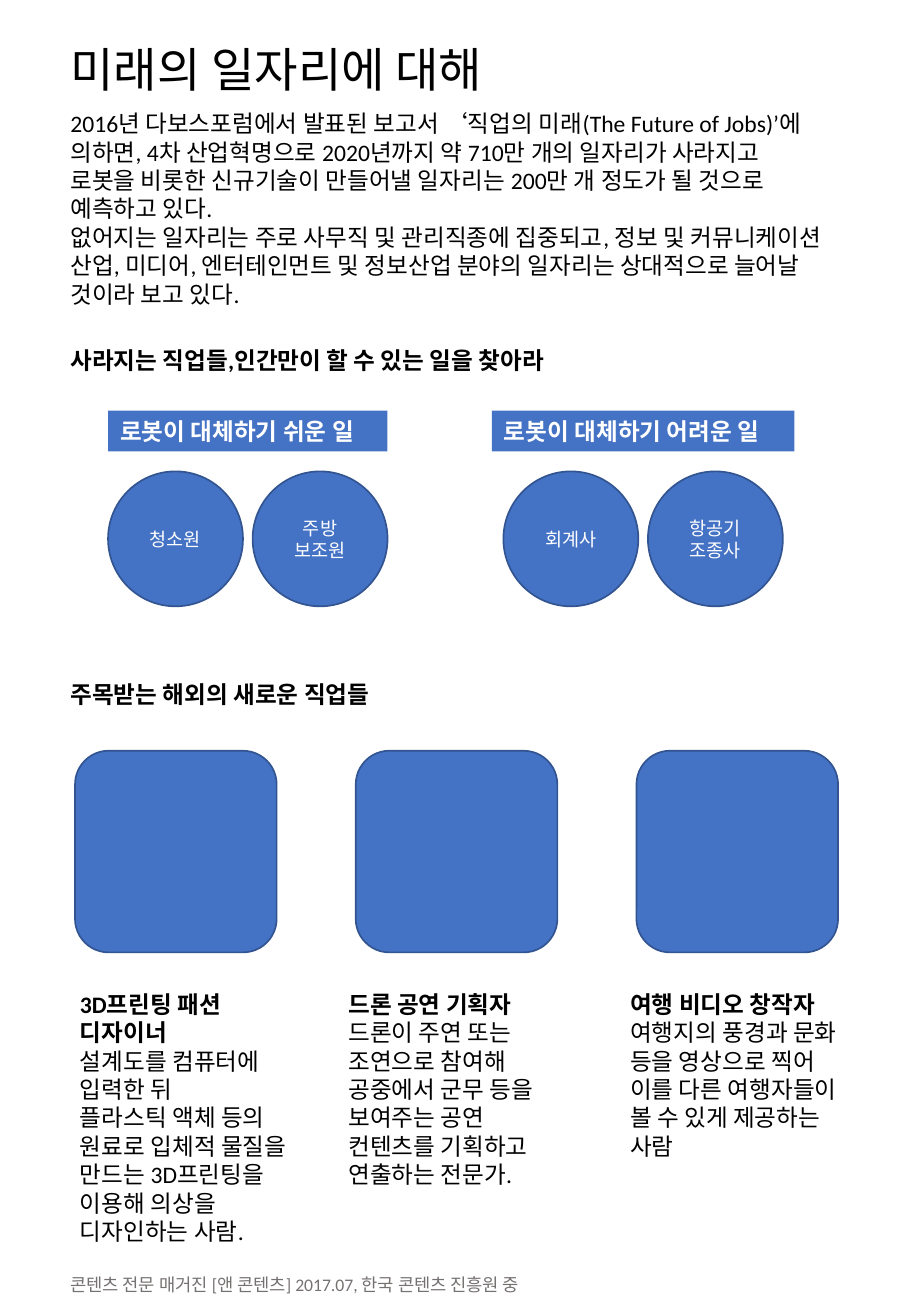
"""Build a one-page handout about the future of jobs."""
import pptx
import pptx.util
import pptx.dml.color
import pptx.enum.shapes
import pptx.enum.text

Pt = pptx.util.Pt
SHAPES = pptx.enum.shapes.MSO_SHAPE
ANCHOR = pptx.enum.text.MSO_ANCHOR
ALIGN = pptx.enum.text.PP_ALIGN
FIT = pptx.enum.text.MSO_AUTO_SIZE

THEME = {
    "font": "Calibri",
    "ink": "000000", "paper": "FFFFFF", "muted": "767171",
    "blue": "4472C4", "edge": "325491",
    "title": 28, "body": 14, "job": 11, "source": 10.5,
}

TITLE = "미래의 일자리에 대해"
INTRO = [
    "2016년 다보스포럼에서 발표된 보고서 ‘직업의 미래(The Future of Jobs)’에 의하면, 4차 산업혁명으로 "
    "2020년까지 약 710만 개의 일자리가 사라지고 로봇을 비롯한 신규기술이 만들어낼 일자리는 200만 개 정도가 "
    "될 것으로 예측하고 있다.",
    "없어지는 일자리는 주로 사무직 및 관리직종에 집중되고, 정보 및 커뮤니케이션 산업, 미디어, 엔터테인먼트 및 "
    "정보산업 분야의 일자리는 상대적으로 늘어날 것이라 보고 있다.",
]
HEADINGS = [
    ("사라지는 직업들,인간만이 할 수 있는 일을 찾아라", 201.6, 319.7),
    ("주목받는 해외의 새로운 직업들", 399.6, 211),
]
JOB_GROUPS = [
    {"label": "로봇이 대체하기 쉬운 일", "left": 64.1, "width": 165.6,
     "jobs": ["청소원", "주방\v보조원"]},
    {"label": "로봇이 대체하기 어려운 일", "left": 291.6, "width": 179.3,
     "jobs": ["회계사", "항공기\v조종사"]},
]
NEW_JOBS = [
    {"caption_left": 40.3, "height": 193.7, "lines": [
        "3D프린팅 패션 디자이너",
        "설계도를 컴퓨터에 입력한 뒤",
        "플라스틱 액체 등의 원료로 입체적 물질을 만드는 3D프린팅을 이용해 의상을 디자인하는 사람."]},
    {"caption_left": 199.4, "height": 126, "lines": [
        "드론 공연 기획자",
        "드론이 주연 또는 조연으로 참여해 공중에서 군무 등을 보여주는 공연 컨텐츠를 기획하고 연출하는 전문가."]},
    {"caption_left": 366.5, "height": 108.7, "lines": [
        "여행 비디오 창작자",
        "여행지의 풍경과 문화 등을 영상으로 찍어 이를 다른 여행자들이 볼 수 있게 제공하는 사람"]},
]
SOURCE = "콘텐츠 전문 매거진 [앤 콘텐츠] 2017.07, 한국 콘텐츠 진흥원 중"

MARGIN, TEXT_WIDTH = 34.6, 462.2
LABEL_TOP, LINE_HEIGHT = 243.4, 24.2
CIRCLE_TOP, CIRCLE, CIRCLE_PITCH = 279.4, 80, 85.7
CARD_LEFT, CARD_TOP, CARD, CARD_PITCH = 44.5, 445, 119.5, 166.4
CAPTION_TOP, CAPTION_WIDTH = 583.2, 141.1


def color(name):
    return pptx.dml.color.RGBColor.from_string(THEME[name])


def write(target, lines, size="body", ink="ink", bold_lines=0, wrap=True,
          align=ALIGN.LEFT, anchor=ANCHOR.TOP, fit=FIT.SHAPE_TO_FIT_TEXT):
    frame = target.text_frame
    frame.text = "\n".join(lines)
    frame.word_wrap = wrap
    frame.auto_size = fit
    frame.vertical_anchor = anchor
    for index, paragraph in enumerate(frame.paragraphs):
        paragraph.alignment = align
        for run in paragraph.runs:
            run.font.name = THEME["font"]
            run.font.size = Pt(THEME[size])
            run.font.color.rgb = color(ink)
            run.font.bold = index < bold_lines


def add_text(slide, box, lines, **style):
    write(slide.shapes.add_textbox(*map(Pt, box)), lines, **style)


def add_blue(slide, kind, box, outlined=True):
    shape = slide.shapes.add_shape(kind, *map(Pt, box))
    shape.shadow.inherit = False
    shape.fill.solid()
    shape.fill.fore_color.rgb = color("blue")
    if outlined:
        shape.line.color.rgb = color("edge")
        shape.line.width = Pt(1)
    else:
        shape.line.fill.background()
    return shape


def add_job_group(slide, group):
    label = add_blue(slide, SHAPES.RECTANGLE,
                     (group["left"], LABEL_TOP, group["width"], LINE_HEIGHT), outlined=False)
    write(label, [group["label"]], ink="paper", bold_lines=1, wrap=False)
    circles_width = CIRCLE_PITCH + CIRCLE
    first = group["left"] + (group["width"] - circles_width) / 2
    for index, job in enumerate(group["jobs"]):
        circle = add_blue(slide, SHAPES.OVAL,
                          (first + index * CIRCLE_PITCH, CIRCLE_TOP, CIRCLE, CIRCLE))
        write(circle, [job], size="job", ink="paper", align=ALIGN.CENTER,
              anchor=ANCHOR.MIDDLE, fit=FIT.NONE)


def main():
    deck = pptx.Presentation()
    deck.slide_width, deck.slide_height = Pt(540), Pt(780)
    slide = deck.slides.add_slide(deck.slide_layouts[5])

    title = slide.shapes.title
    title.left, title.top, title.width, title.height = map(Pt, (MARGIN, 20.2, 281.5, 41))
    write(title, [TITLE], size="title", wrap=False)

    add_text(slide, (MARGIN, 61.2, TEXT_WIDTH, 126), INTRO)
    for heading, top, width in HEADINGS:
        add_text(slide, (MARGIN, top, width, LINE_HEIGHT), [heading], bold_lines=1, wrap=False)
    for group in JOB_GROUPS:
        add_job_group(slide, group)
    for index, job in enumerate(NEW_JOBS):
        add_blue(slide, SHAPES.ROUNDED_RECTANGLE,
                 (CARD_LEFT + index * CARD_PITCH, CARD_TOP, CARD, CARD))
        add_text(slide, (job["caption_left"], CAPTION_TOP, CAPTION_WIDTH, job["height"]),
                 job["lines"], bold_lines=1)
    add_text(slide, (MARGIN, 751.7, TEXT_WIDTH, 20.9), [SOURCE], size="source", ink="muted")

    deck.save("out.pptx")


if __name__ == "__main__":
    main()
